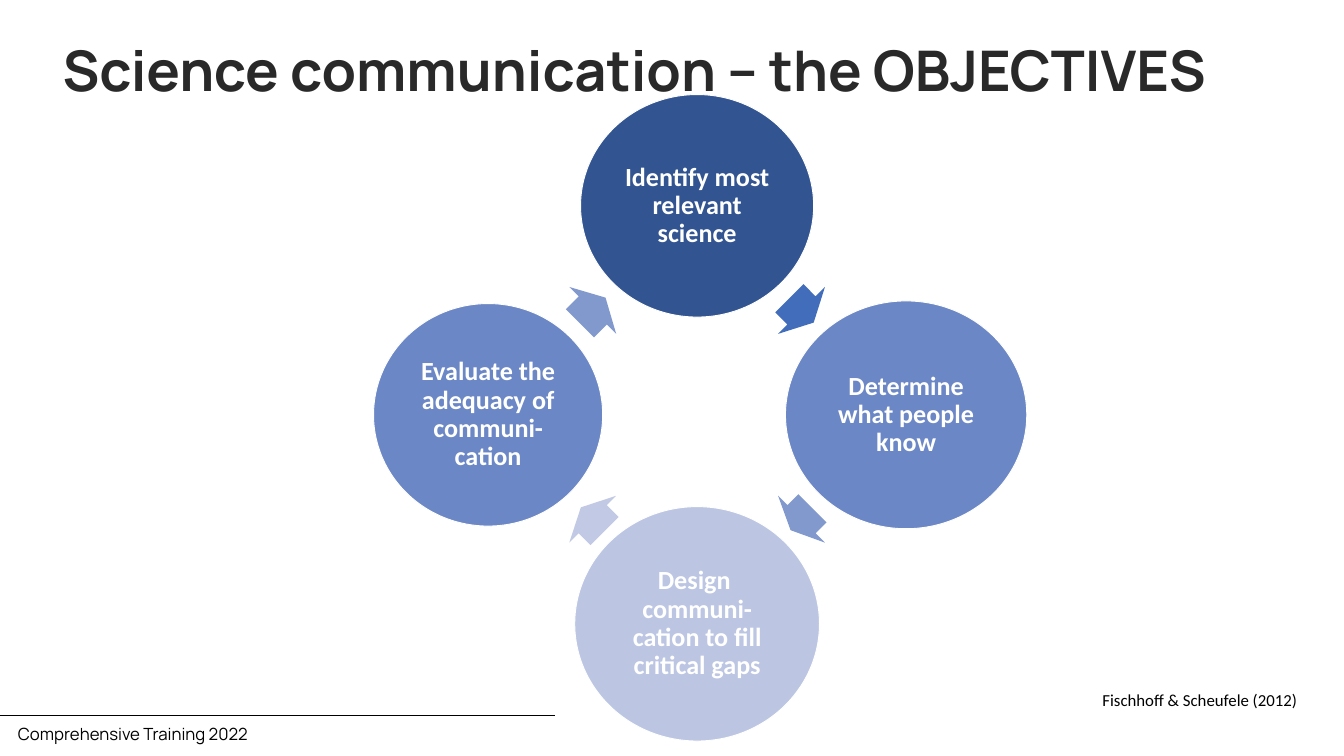
from math import cos, radians, sin

from lxml.etree import SubElement
from pptx import Presentation
from pptx.dml.color import RGBColor
from pptx.enum.shapes import MSO_CONNECTOR, MSO_SHAPE
from pptx.enum.text import MSO_ANCHOR, PP_ALIGN
from pptx.oxml.ns import qn
from pptx.util import Cm, Pt

TITLE = "Science communication – the OBJECTIVES"
FOOTER = "Comprehensive Training 2022"
CITATION = "Fischhoff & Scheufele (2012)"

STEPS = [
    {"lines": ["Identify most relevant science"], "size": (8.81, 8.41), "fill": "325491",
     "arrow_size": (1.3, 2.51), "arrow_fill": "416DBB"},
    {"lines": ["Determine what people know"], "size": (9.12, 8.61), "fill": "6C87C5",
     "arrow_size": (1.17, 2.51), "arrow_fill": "8299CE"},
    {"lines": ["Design ", "communi-cation to fill critical gaps"], "size": (9.25, 8.86),
     "fill": "BCC6E2", "arrow_size": (1.27, 2.51), "arrow_fill": "C1C9E4"},
    {"lines": ["Evaluate the adequacy of communi-cation"], "size": (8.66, 8.41),
     "fill": "6C87C5", "arrow_size": (1.37, 2.51), "arrow_fill": "8299CE"},
]
CENTER = (26.35, 15.68)
STEP_RADIUS = 7.9
ARROW_RADIUS = 5.58


def color(hex_value):
    return RGBColor.from_string(hex_value)


def add_run(paragraph, text, font_name, size, hex_value, bold=False):
    run = paragraph.add_run()
    run.text = text
    run.font.name = font_name
    run.font.size = Pt(size)
    run.font.bold = bold
    run.font.color.rgb = color(hex_value)


def add_ring_shape(slide, kind, angle, radius, size, fill):
    width, height = size
    left = CENTER[0] + radius * sin(radians(angle)) - width / 2
    top = CENTER[1] - radius * cos(radians(angle)) - height / 2
    shape = slide.shapes.add_shape(kind, Cm(left), Cm(top), Cm(width), Cm(height))
    shape.shadow.inherit = False
    shape.fill.solid()
    shape.fill.fore_color.rgb = color(fill)
    shape.line.fill.background()
    return shape


def add_step(slide, step, angle):
    circle = add_ring_shape(slide, MSO_SHAPE.OVAL, angle, STEP_RADIUS, step["size"], step["fill"])
    circle.line.color.rgb = color("FFFFFF")
    circle.line.width = Pt(1)
    frame = circle.text_frame
    frame.word_wrap = True
    frame.vertical_anchor = MSO_ANCHOR.MIDDLE
    frame.margin_left = frame.margin_right = Cm(0.1)
    frame.margin_top = frame.margin_bottom = Cm(0.1)
    for index, line in enumerate(step["lines"]):
        paragraph = frame.add_paragraph() if index else frame.paragraphs[0]
        paragraph.alignment = PP_ALIGN.CENTER
        paragraph.line_spacing = 0.9
        add_run(paragraph, line, "Calibri", 28, "FFFFFF", True)
    paragraph.space_after = Pt(9.8)


def add_arrow(slide, step, angle):
    arrow = add_ring_shape(slide, MSO_SHAPE.RIGHT_ARROW, angle, ARROW_RADIUS,
                           step["arrow_size"], step["arrow_fill"])
    arrow.adjustments[0] = 0.6
    arrow.adjustments[1] = 0.5
    arrow.rotation = angle


def add_label(slide, text, left, top, width, font_name, alignment):
    label = slide.shapes.add_textbox(Cm(left), Cm(top), Cm(width), Cm(1.02))
    label.text_frame.word_wrap = True
    paragraph = label.text_frame.paragraphs[0]
    paragraph.alignment = alignment
    add_run(paragraph, text, font_name, 18, "000000")


def add_title(slide):
    title = slide.shapes.title
    title.left, title.top, title.width, title.height = Cm(2.11), Cm(1.52), Cm(46.79), Cm(3.25)
    title.text_frame.vertical_anchor = MSO_ANCHOR.TOP
    paragraph = title.text_frame.paragraphs[0]
    paragraph.alignment = PP_ALIGN.LEFT
    paragraph.line_spacing = 0.9
    add_run(paragraph, TITLE, "Manrope", 60, "292929", True)


def add_footer_rule(slide):
    rule = slide.shapes.add_connector(MSO_CONNECTOR.STRAIGHT, Cm(-0.2), Cm(27.05), Cm(20.96), Cm(27.05))
    rule.line.color.rgb = color("000000")
    rule.line.width = Pt(0.5)
    SubElement(rule._element.spPr, qn("a:effectLst"))


def main():
    presentation = Presentation()
    presentation.slide_width = Cm(50.8)
    presentation.slide_height = Cm(28.575)
    slide = presentation.slides.add_slide(presentation.slide_layouts[5])
    add_footer_rule(slide)
    add_label(slide, FOOTER, 0.43, 27.23, 16.71, "Manrope", PP_ALIGN.LEFT)
    add_title(slide)
    turn = 360 / len(STEPS)
    for index, step in enumerate(STEPS):
        add_step(slide, step, index * turn)
        add_arrow(slide, step, (index + 0.5) * turn)
    add_label(slide, CITATION, 41.28, 25.93, 8, "Calibri", PP_ALIGN.RIGHT)
    presentation.save("out.pptx")


if __name__ == "__main__":
    main()
